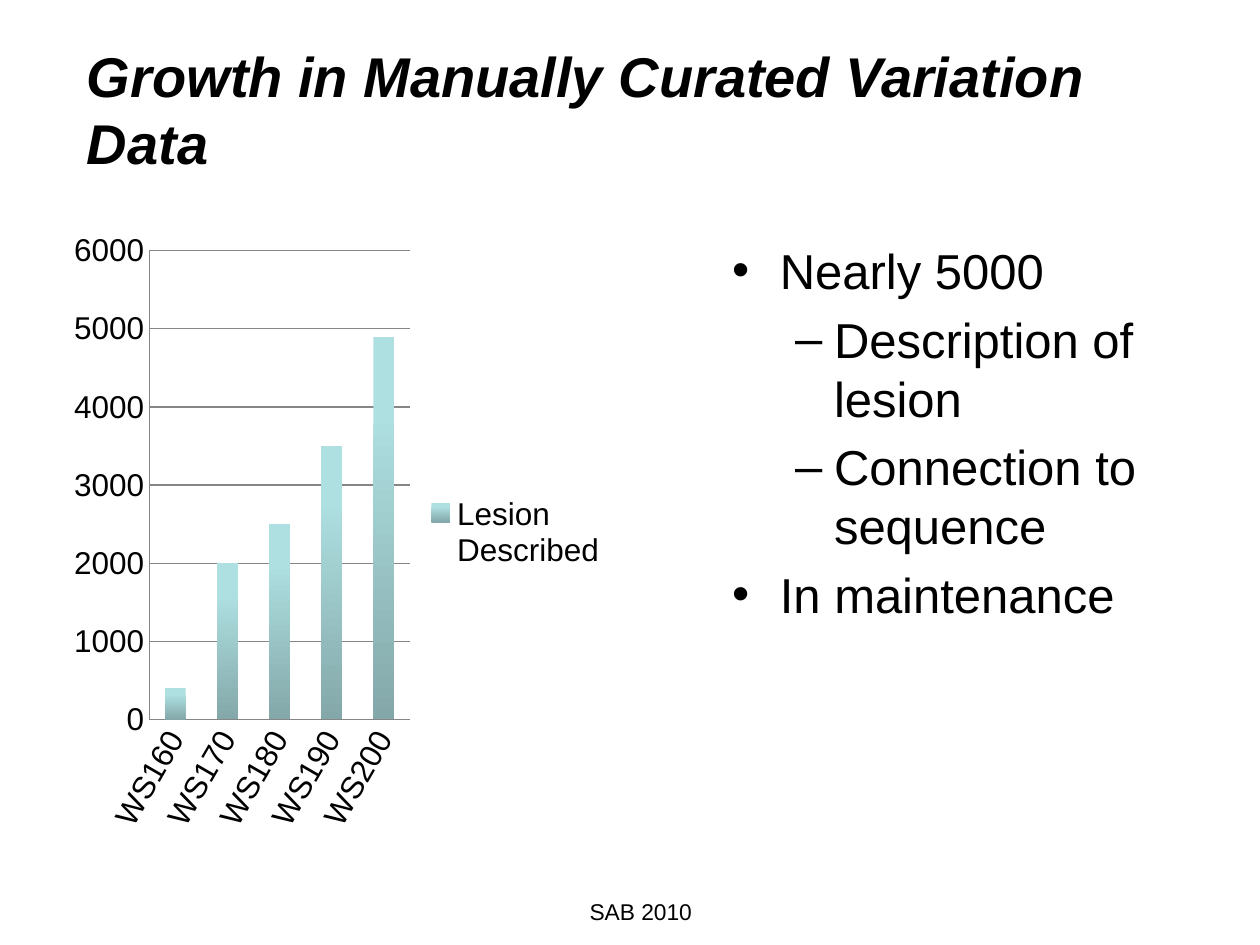
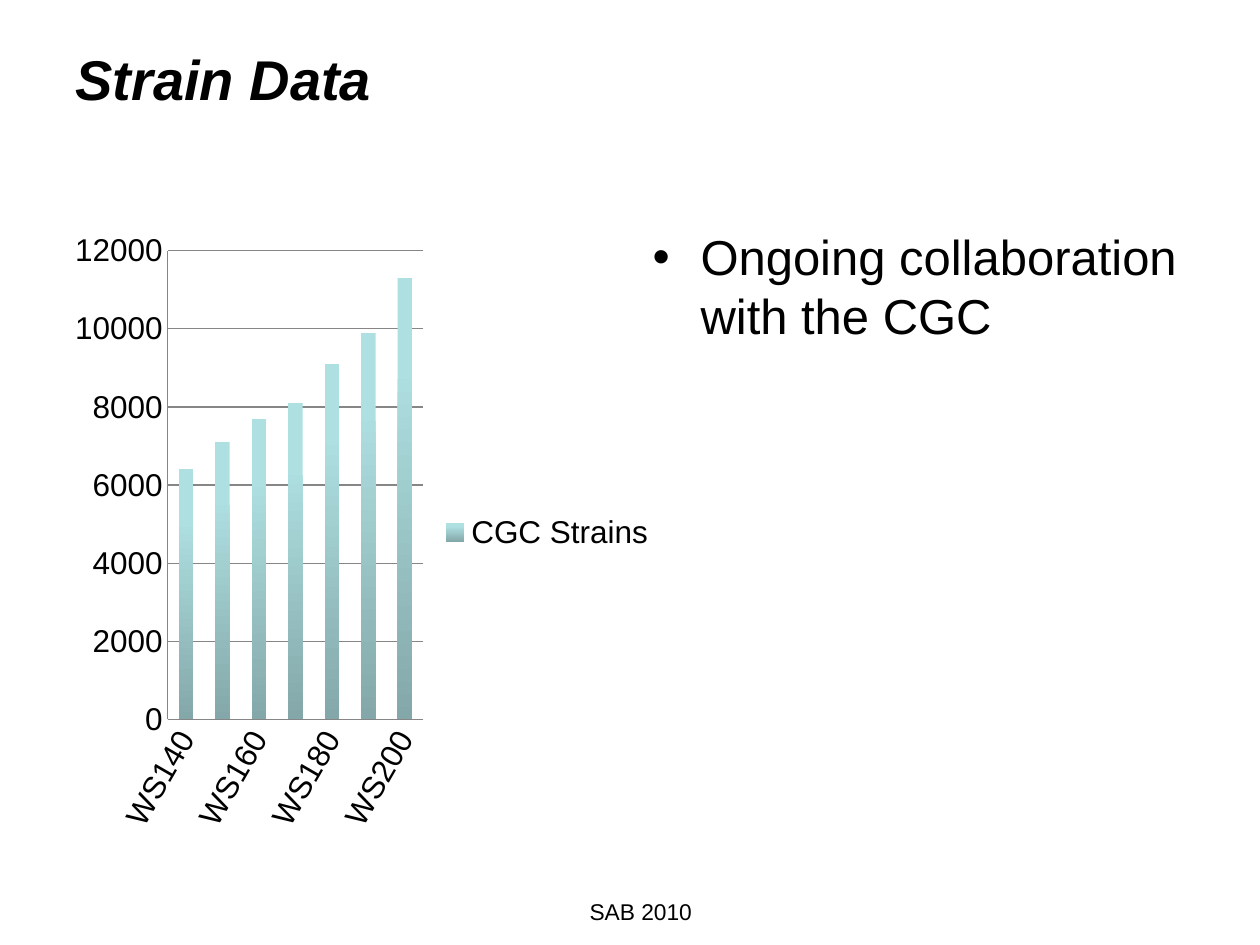
from lxml import etree
from pptx import Presentation
from pptx.chart.data import CategoryChartData
from pptx.dml.color import RGBColor
from pptx.enum.chart import XL_CHART_TYPE, XL_LEGEND_POSITION, XL_TICK_MARK
from pptx.enum.text import MSO_ANCHOR, MSO_AUTO_SIZE, PP_ALIGN
from pptx.oxml.ns import qn
from pptx.util import Inches, Pt

COLUMN_CLUSTERED = XL_CHART_TYPE.COLUMN_CLUSTERED
LEGEND_RIGHT = XL_LEGEND_POSITION.RIGHT
NO_TICKS = XL_TICK_MARK.NONE
TOP = MSO_ANCHOR.TOP
NO_AUTOFIT = MSO_AUTO_SIZE.NONE
LEFT, CENTER = PP_ALIGN.LEFT, PP_ALIGN.CENTER

FONT = "Arial"
BLACK = RGBColor(0x00, 0x00, 0x00)
WHITE = RGBColor(0xFF, 0xFF, 0xFF)
AXIS_GRAY = RGBColor(0x86, 0x86, 0x86)
BAR_TOP = RGBColor(0xAE, 0xDF, 0xE1)
BAR_BOTTOM = RGBColor(0x84, 0xA8, 0xA9)
BULLETS = [("•", 0.38, -0.38), ("–", 0.81, -0.31)]

SLIDES = [
    {
        "title": "Growth in Manually Curated Variation Data",
        "title_box": (0.59, 0.28, 9, 1.25),
        "body_box": (5.71, 1.86, 3.96, 4.05),
        "filled": True,
        "points": [
            (0, "Nearly 5000"),
            (1, "Description of lesion"),
            (1, "Connection to sequence"),
            (0, "In maintenance"),
        ],
        "chart_box": (0.5, 1.75, 4.42, 4.95),
        "series": "Lesion Described",
        "first_release": 160,
        "values": [400, 2000, 2500, 3500, 4900],
        "axis_step": 1000,
    },
    {
        "title": "Strain Data",
        "title_box": (0.5, 0.3, 9, 1.25),
        "body_box": (5.08, 1.75, 4.42, 4.95),
        "filled": False,
        "points": [(0, "Ongoing collaboration with the CGC")],
        "chart_box": (0.5, 1.75, 4.81, 4.95),
        "series": "CGC Strains",
        "first_release": 140,
        "values": [6400, 7100, 7700, 8100, 9100, 9900, 11300],
        "axis_step": 2000,
    },
]


def place(shape, box, filled=False):
    shape.left, shape.top, shape.width, shape.height = map(Inches, box)
    if filled:
        shape.fill.solid()
        shape.fill.fore_color.rgb = WHITE
    frame = shape.text_frame
    frame.word_wrap = True
    frame.auto_size = NO_AUTOFIT
    frame.vertical_anchor = TOP
    return frame


def set_font(font, size):
    font.name = FONT
    font.size = Pt(size)
    font.color.rgb = BLACK


presentation = Presentation()
presentation.slide_width = Inches(10)
presentation.slide_height = Inches(7.5)

for content in SLIDES:
    slide = presentation.slides.add_slide(presentation.slide_layouts[1])

    footer = slide.shapes.add_textbox(0, 0, 0, 0)
    paragraph = place(footer, (3.17, 7.08, 3.83, 0.5)).paragraphs[0]
    paragraph.text = "SAB 2010"
    paragraph.alignment = CENTER
    set_font(paragraph.font, 13)

    title_frame = place(slide.shapes.title, content["title_box"], content["filled"])
    paragraph = title_frame.paragraphs[0]
    paragraph.text = content["title"]
    paragraph.alignment = LEFT
    set_font(paragraph.font, 32)
    paragraph.font.bold = True
    paragraph.font.italic = True

    body_frame = place(slide.placeholders[1], content["body_box"], content["filled"])
    for index, (level, point) in enumerate(content["points"]):
        paragraph = body_frame.add_paragraph() if index else body_frame.paragraphs[0]
        paragraph.text = point
        paragraph.level = level
        bullet, margin, indent = BULLETS[level]
        properties = paragraph._p.get_or_add_pPr()
        properties.set("marL", str(Inches(margin)))
        properties.set("indent", str(Inches(indent)))
        etree.SubElement(properties, qn("a:buChar")).set("char", bullet)
        paragraph.space_before = Pt(5.6 if index else 0)
        set_font(paragraph.font, 28)

    values = content["values"]
    chart_data = CategoryChartData()
    chart_data.categories = [f"WS{content['first_release'] + 10 * i}" for i in range(len(values))]
    chart_data.add_series(content["series"], values)
    chart = slide.shapes.add_chart(
        COLUMN_CLUSTERED, *map(Inches, content["chart_box"]), chart_data
    ).chart
    set_font(chart.font, 18)
    chart.has_title = False
    chart.has_legend = True
    chart.legend.position = LEGEND_RIGHT
    chart.legend.include_in_layout = False

    plot = chart.plots[0]
    plot.gap_width = 150
    plot.vary_by_categories = False
    fill = plot.series[0].format.fill
    fill.gradient()
    fill.gradient_angle = 270
    for stop, color, position in zip(fill.gradient_stops, (BAR_TOP, BAR_BOTTOM), (0.2, 1)):
        stop.color.rgb = color
        stop.position = position

    value_axis = chart.value_axis
    value_axis.minimum_scale = 0
    value_axis.maximum_scale = 6 * content["axis_step"]
    value_axis.major_unit = content["axis_step"]
    value_axis.major_gridlines.format.line.color.rgb = AXIS_GRAY
    for axis in (value_axis, chart.category_axis):
        axis.major_tick_mark = NO_TICKS
        axis.minor_tick_mark = NO_TICKS
        axis.format.line.color.rgb = AXIS_GRAY
        set_font(axis.tick_labels.font, 18)
    label_body = chart.category_axis._element.find(qn("c:txPr")).find(qn("a:bodyPr"))
    label_body.set("rot", "-3600000")

presentation.save("out.pptx")
